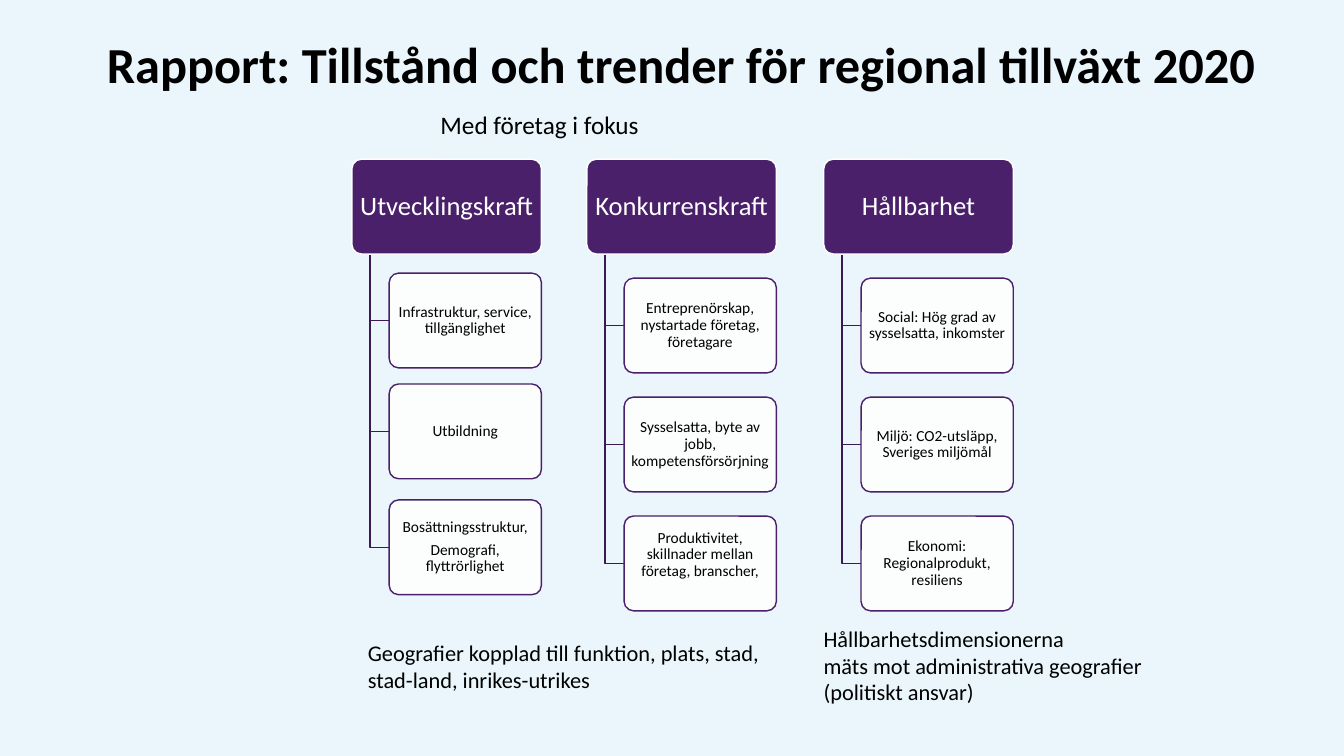
import pptx
import pptx.dml.color
import pptx.enum.shapes
import pptx.enum.text
import pptx.util
from lxml import etree

Inches, Pt = pptx.util.Inches, pptx.util.Pt
RGBColor = pptx.dml.color.RGBColor
ALIGN, ANCHOR = pptx.enum.text.PP_ALIGN, pptx.enum.text.MSO_ANCHOR
COLORS = {"background": "EAF6FB", "purple": "492069", "branch": "3A1A54",
          "white": "FFFFFF", "black": "000000"}
BOX_HEIGHT = 0.94
HEADER_TOP, HEADER_WIDTH = 1.58, 1.88
TRUNK_TOP, TRUNK_INDENT = 2.53, 0.18
ITEM_WIDTH, ITEM_INDENT = 1.51, 0.37


def write(frame, lines, size, color="black", align=ALIGN.LEFT, insets=(0.1, 0.05, 0.1, 0.05),
          anchor=ANCHOR.TOP, wrap=True, bold=False, spacing=1.0, after=0):
    """Fill a text frame with one paragraph per line; insets are left, top, right, bottom."""
    frame.auto_size = pptx.enum.text.MSO_AUTO_SIZE.NONE
    frame.word_wrap = wrap
    frame.vertical_anchor = anchor
    for side, inset in zip(("left", "top", "right", "bottom"), insets):
        setattr(frame, f"margin_{side}", Inches(inset))
    for index, line in enumerate(lines):
        paragraph = frame.add_paragraph() if index else frame.paragraphs[0]
        paragraph.text = line
        paragraph.alignment = align
        paragraph.line_spacing = spacing
        paragraph.space_after = Pt(after)
        for name, value in {"name": "Calibri", "size": Pt(size), "bold": bold}.items():
            setattr(paragraph.font, name, value)
        paragraph.font.color.rgb = RGBColor.from_string(COLORS[color])


def add_box(left, top, width, fill, line, lines, **text_format):
    box = slide.shapes.add_shape(pptx.enum.shapes.MSO_SHAPE.ROUNDED_RECTANGLE, Inches(left),
                                 Inches(top), Inches(width), Inches(BOX_HEIGHT))
    box.adjustments[0] = 0.1
    box.shadow.inherit = False
    box.fill.solid()
    box.fill.fore_color.rgb = RGBColor.from_string(COLORS[fill])
    box.line.color.rgb = RGBColor.from_string(COLORS[line])
    box.line.width = Pt(1)
    write(box.text_frame, lines, align=ALIGN.CENTER, anchor=ANCHOR.MIDDLE,
          spacing=0.9, **text_format)
    return box


presentation = pptx.Presentation()
presentation.slide_width = Inches(13.33)
presentation.slide_height = Inches(7.5)
slide = presentation.slides.add_slide(presentation.slide_layouts[5])
slide.background.fill.solid()
slide.background.fill.fore_color.rgb = RGBColor.from_string(COLORS["background"])

title = slide.shapes.title
title.left, title.top, title.width, title.height = map(Inches, (1.06, 0.14, 12.17, 0.8))
write(title.text_frame, ["Rapport: Tillstånd och trender för regional tillväxt 2020"], 36,
      insets=(0, 0, 0, 0), anchor=ANCHOR.BOTTOM, bold=True, spacing=0.9)

# Header, left edge, tops of the items, items
columns = [
    ("Utvecklingskraft", 3.49, (2.71, 3.81, 4.96), [
        ["Infrastruktur, service, tillgänglighet"],
        ["Utbildning"],
        ["Bosättningsstruktur,", "Demografi, flyttrörlighet"]]),
    ("Konkurrenskraft", 5.82, (2.76, 3.94, 5.12), [
        ["Entreprenörskap, nystartade företag, företagare"],
        ["Sysselsatta, byte av jobb, kompetensförsörjning"],
        ["Produktivitet, skillnader mellan företag, branscher,"]]),
    ("Hållbarhet", 8.17, (2.76, 3.94, 5.12), [
        ["Social: Hög grad av sysselsatta, inkomster"],
        ["Miljö: CO2-utsläpp, Sveriges miljömål"],
        ["Ekonomi: Regionalprodukt, resiliens"]]),
]
for header, left, tops, items in columns:
    add_box(left, HEADER_TOP, HEADER_WIDTH, "purple", "white", [header], size=19,
            color="white", insets=(0.04, 0.03, 0.04, 0.03))
    trunk, item_left = left + TRUNK_INDENT, left + ITEM_INDENT
    for top, lines in zip(tops, items):
        middle = Inches(top + BOX_HEIGHT / 2)
        builder = slide.shapes.build_freeform(Inches(trunk), Inches(TRUNK_TOP))
        builder.add_line_segments([(Inches(trunk), middle), (Inches(item_left), middle)],
                                  close=False)
        branch = builder.convert_to_shape()
        branch.shadow.inherit = False
        branch.fill.background()
        branch.line.color.rgb = RGBColor.from_string(COLORS["branch"])
        branch.line.width = Pt(1)

        bottom_inset = 0.19 if lines[0].startswith("Produktivitet") else 0.02
        item = add_box(item_left, top, ITEM_WIDTH, "white", "purple", lines, size=11,
                       insets=(0.02, 0.02, 0.02, bottom_inset), after=4)
        fill_color = item.fill._xPr.find(".//" + pptx.oxml.ns.qn("a:srgbClr"))
        etree.SubElement(fill_color, pptx.oxml.ns.qn("a:alpha"), val="90000")

notes = [
    ((3.55, 6.29, 4.42, 0.64), 16, True,
     ["Geografier kopplad till funktion, plats, stad, stad-land, inrikes-utrikes"]),
    ((8.07, 6.15, 4.12, 0.91), 16, True,
     ["Hållbarhetsdimensionerna", "mäts mot administrativa geografier", "(politiskt ansvar)"]),
    ((4.27, 1.04, 2.19, 0.4), 18, False, ["Med företag i fokus"]),
]
for position, size, wrap, lines in notes:
    text_box = slide.shapes.add_textbox(*map(Inches, position))
    write(text_box.text_frame, lines, size, wrap=wrap)

presentation.save("out.pptx")
